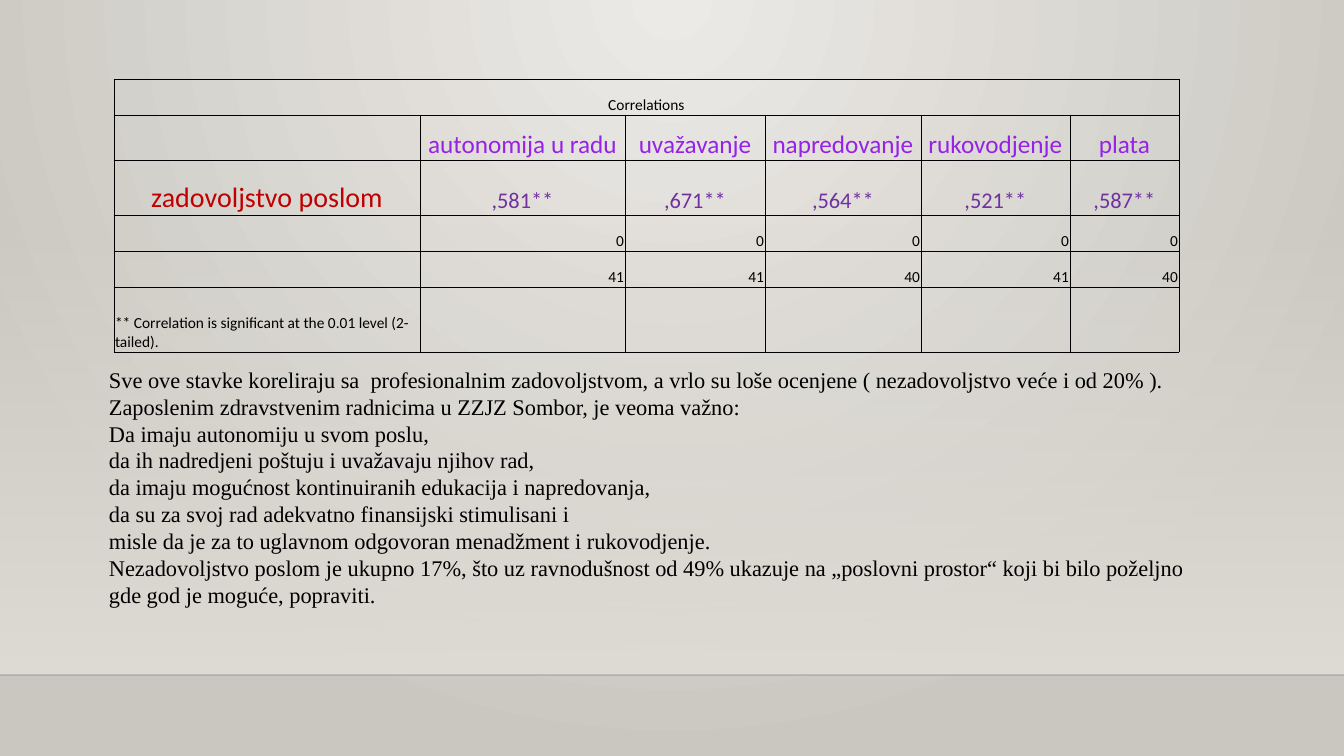
from lxml.etree import SubElement, fromstring
from pptx import Presentation
from pptx.dml.color import RGBColor
from pptx.enum.shapes import MSO_CONNECTOR as Connector, MSO_SHAPE as Shape
from pptx.enum.text import MSO_ANCHOR as Anchor, MSO_AUTO_SIZE as AutoSize, PP_ALIGN as Align
from pptx.oxml.ns import nsdecls, qn
from pptx.util import Pt

PX = 12192000 / 1344
COLORS = {
    "light": "ECEAE7", "dark": "CAC7C1", "wall": "DFDBD5", "floor_line": "000001",
    "black": "000000", "heading": "9622E7", "value": "7030A0", "row_label": "C00000",
}


def px(*lengths):
    return [round(length * PX) for length in lengths]


def style_span(span, font, size, color):
    for name, value in {"name": font, "size": Pt(size)}.items():
        setattr(span.font, name, value)
    span.font.color.rgb = RGBColor.from_string(COLORS[color])


deck = Presentation()
deck.slide_width, deck.slide_height = px(1344, 756)
page = deck.slides.add_slide(deck.slide_layouts[6])

# Background, wall and floor line
backdrop = page.background.fill
wall = page.shapes.add_shape(Shape.RECTANGLE, *px(0, 223, 1344, 452))
wall.shadow.inherit = False
wall.line.fill.background()
for fill, names in ((backdrop, ("light", "dark")), (wall.fill, ("wall", "wall"))):
    fill.gradient()
    for stop, name, position in zip(fill.gradient_stops, names, (0, 1)):
        stop.color.rgb = RGBColor.from_string(COLORS[name])
        stop.position = position
wall.fill.gradient_angle = 270
clear_color = next(wall._element.spPr.iter(qn("a:srgbClr")))
SubElement(clear_color, qn("a:alpha"), val="0")

linear = next(page._element.iter(qn("p:bgPr"))).find(".//" + qn("a:lin"))
linear.getparent().replace(linear, fromstring(
    f'<a:path {nsdecls("a")} path="circle">'
    '<a:fillToRect l="43000" t="0" r="43000" b="100000"/></a:path>'))

floor_line = page.shapes.add_connector(Connector.STRAIGHT, *px(0, 675, 1344, 675))
floor_line.line.width = Pt(1)
floor_line.line.color.rgb = RGBColor.from_string(COLORS["floor_line"])
line_color = next(floor_line._element.spPr.iter(qn("a:srgbClr")))
SubElement(line_color, qn("a:alpha"), val="20000")
SubElement(floor_line._element.spPr, qn("a:effectLst"))

# Correlation table
SMALL = (11, "black")
HEADING = (18, "heading")
VALUE = (16, "value")
# height, alignment, format of the first cell, format of the others, texts
ROWS = [
    (36, Align.CENTER, SMALL, SMALL, ["Correlations", "", "", "", "", ""]),
    (45, Align.CENTER, HEADING, HEADING,
     ["", "autonomija u radu", "uvažavanje", "napredovanje", "rukovodjenje", "plata"]),
    (55, Align.CENTER, (20, "row_label"), VALUE,
     ["zadovoljstvo poslom", ",581**", ",671**", ",564**", ",521**", ",587**"]),
    (36, Align.RIGHT, SMALL, SMALL, ["", "0", "0", "0", "0", "0"]),
    (36, Align.RIGHT, SMALL, SMALL, ["", "41", "41", "40", "41", "40"]),
    (65, Align.LEFT, SMALL, SMALL,
     ["** Correlation is significant at the 0.01 level (2-tailed).", "", "", "", "", ""]),
]
WIDTHS = [306, 205, 140, 156, 149, 109]
HEIGHTS = [row[0] for row in ROWS]

table = page.shapes.add_table(
    len(ROWS), len(WIDTHS), *px(114, 79, sum(WIDTHS), sum(HEIGHTS))).table
table.first_row = table.horz_banding = False
for column, width in zip(table.columns, px(*WIDTHS)):
    column.width = width
for row, height in zip(table.rows, px(*HEIGHTS)):
    row.height = height

margin = px(1)[0]
cell_format = {
    "margin_left": margin, "margin_right": margin, "margin_top": margin,
    "margin_bottom": 0, "vertical_anchor": Anchor.BOTTOM,
}
for row, (_, align, first, others, texts) in zip(table.rows, ROWS):
    for index, (cell, text) in enumerate(zip(row.cells, texts)):
        for name, value in cell_format.items():
            setattr(cell, name, value)
        cell.fill.background()
        for place, side in enumerate(("lnL", "lnR", "lnT", "lnB")):
            cell._tc.tcPr.insert(place, fromstring(
                f'<a:{side} {nsdecls("a")} w="6350"><a:solidFill>'
                f'<a:srgbClr val="{COLORS["black"]}"/></a:solidFill></a:{side}>'))
        para = cell.text_frame.paragraphs[0]
        para.alignment = align
        if text:
            span = para.add_run()
            span.text = text
            style_span(span, "Calibri", *(others if index else first))
table.cell(0, 0).merge(table.cell(0, len(WIDTHS) - 1))

# Conclusions
CONCLUSIONS = [
    "Sve ove stavke koreliraju sa  profesionalnim zadovoljstvom, a vrlo su loše ocenjene "
    "( nezadovoljstvo veće i od 20% ).",
    "Zaposlenim zdravstvenim radnicima u ZZJZ Sombor, je veoma važno:",
    "Da imaju autonomiju u svom poslu,",
    "da ih nadredjeni poštuju i uvažavaju njihov rad,",
    "da imaju mogućnost kontinuiranih edukacija i napredovanja,",
    "da su za svoj rad adekvatno finansijski stimulisani i",
    "misle da je za to uglavnom odgovoran menadžment i rukovodjenje.",
    "Nezadovoljstvo poslom je ukupno 17%, što uz ravnodušnost od 49% ukazuje na "
    "„poslovni prostor“ koji bi bilo poželjno",
    "gde god je moguće, popraviti.",
]
frame = page.shapes.add_textbox(*px(99, 361, 1101, 254)).text_frame
frame.word_wrap = False
frame.auto_size = AutoSize.SHAPE_TO_FIT_TEXT
for index, text in enumerate(CONCLUSIONS):
    para = frame.add_paragraph() if index else frame.paragraphs[0]
    span = para.add_run()
    span.text = text
    style_span(span, "Times New Roman", 16, "black")

deck.save("out.pptx")
